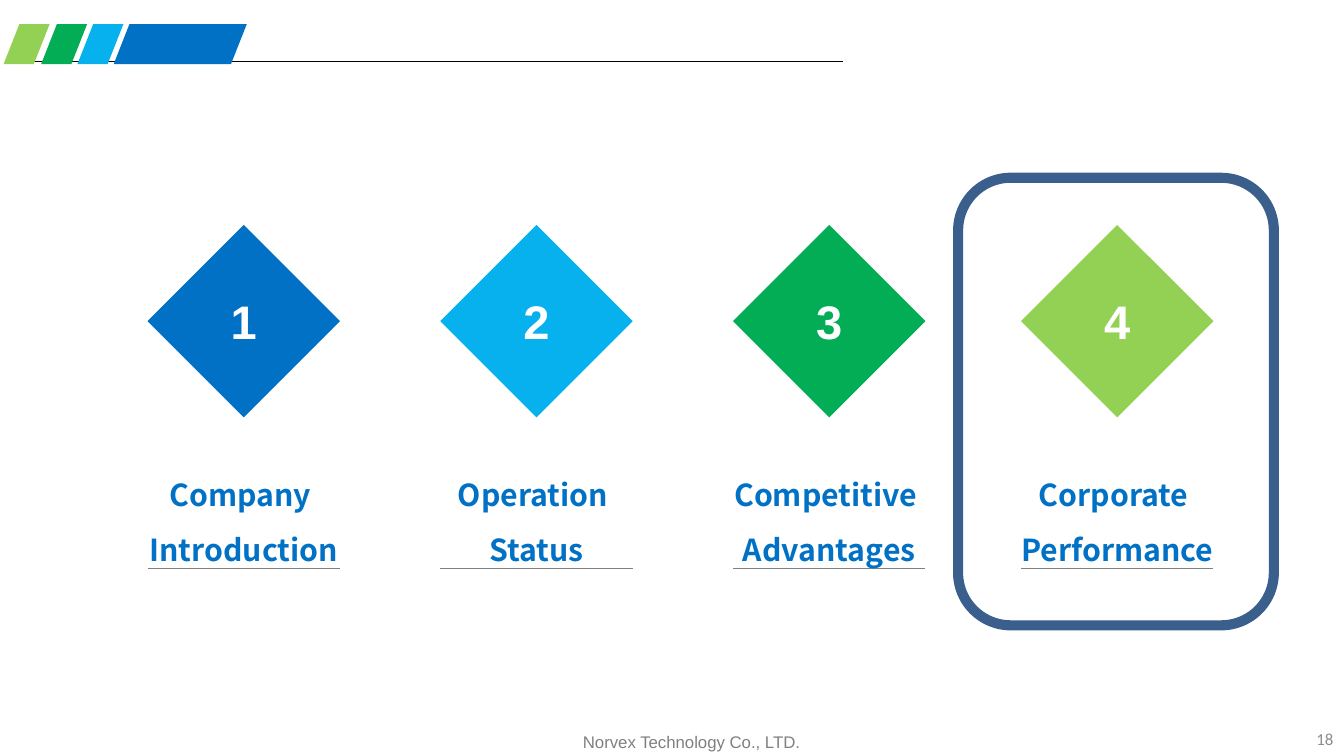
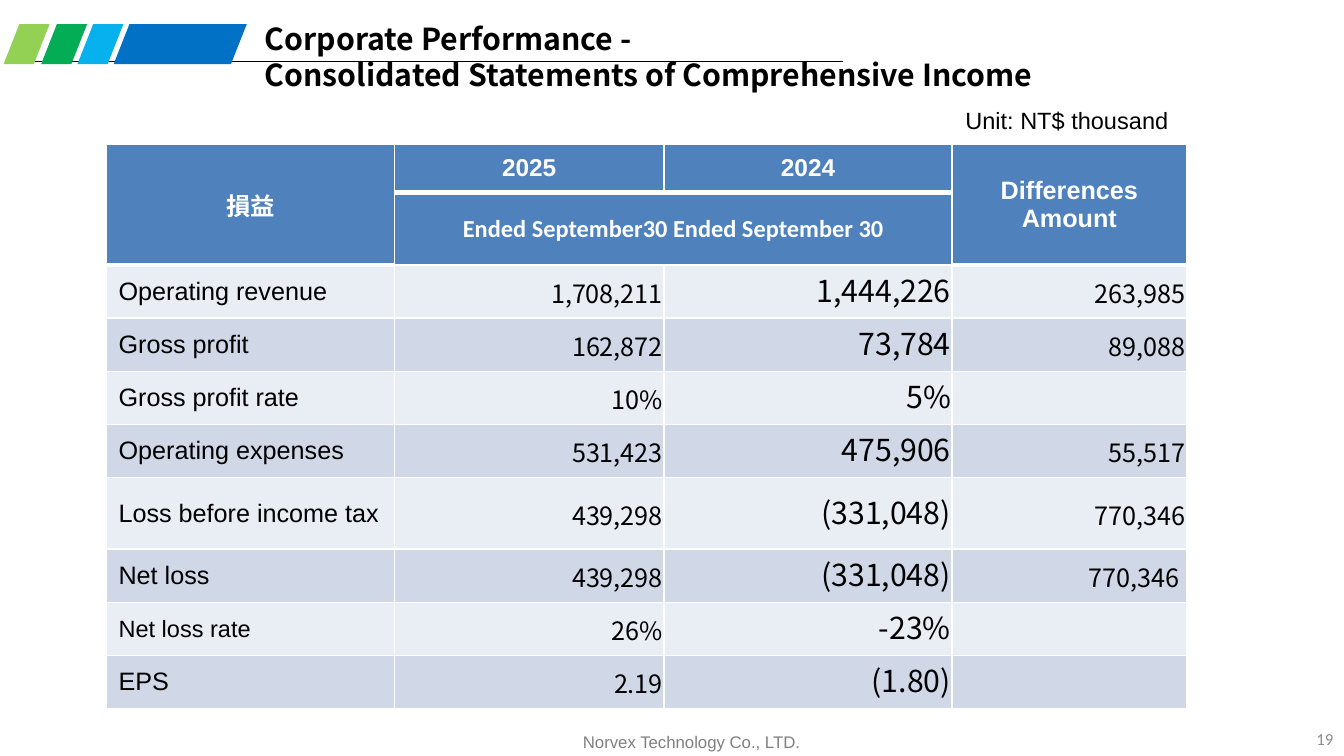
import pptx
import pptx.dml.color
import pptx.enum.shapes
import pptx.enum.text
import pptx.oxml
import pptx.oxml.ns
import pptx.util

Inches = pptx.util.Inches
Pt = pptx.util.Pt
ALIGN = pptx.enum.text.PP_ALIGN
ANCHOR = pptx.enum.text.MSO_ANCHOR
SHAPE = pptx.enum.shapes.MSO_SHAPE

COLORS = {
    "blue": "0071C5", "sky": "06B1EE", "green": "03AD55", "lime": "93D154",
    "frame": "3A5F8C", "rule": "808080", "number": "8C8C8C",
    "black": "000000", "white": "FFFFFF",
    "header": "4F81BD", "light": "E9EDF4", "dark": "D0D8E8",
}
SANS, CJK, CALIBRI = "Arial", "Noto Sans CJK SC", "Calibri"


def rgb(name):
    return pptx.dml.color.RGBColor.from_string(COLORS[name])


class Deck:
    """Holds the shared style and the slide being built."""

    def __init__(self):
        self.presentation = pptx.Presentation()
        self.presentation.slide_width = Inches(11.11)
        self.presentation.slide_height = Inches(6.25)
        self.slide = None

    def new_slide(self, number):
        layout = self.presentation.slide_layouts[6]
        self.slide = self.presentation.slides.add_slide(layout)
        self.text((4.09, 6, 3.25, 0.28), ["Norvex Technology Co., LTD."],
                  size=10, color="rule", align=ALIGN.CENTER)
        self.line(0.07, 6.97, 0.51, "black")
        for left, width, color in ((0.94, 0.97, "blue"), (0.64, 0.25, "sky"),
                                   (0.34, 0.25, "green"), (0.03, 0.25, "lime")):
            self.slanted_bar(left, width, color)
        self.text((10.63, 5.96, 0.49, 0.29), [str(number)], size=10, font=CALIBRI,
                  color="number", align=ALIGN.RIGHT, anchor=ANCHOR.MIDDLE)

    def add_lines(self, frame, lines, size, font=SANS, color="black", bold=False,
                  align=ALIGN.LEFT, spacing=None):
        for index, line in enumerate(lines):
            paragraph = frame.paragraphs[0] if index == 0 else frame.add_paragraph()
            paragraph.alignment = align
            if spacing:
                paragraph.line_spacing = spacing
            run = paragraph.add_run()
            run.text = line
            run.font.size = Pt(size)
            run.font.name = font
            run.font.bold = bold
            run.font.color.rgb = rgb(color)

    def text(self, box, lines, wrap=True, anchor=ANCHOR.TOP, inset=None, **style):
        frame = self.slide.shapes.add_textbox(*map(Inches, box)).text_frame
        frame.word_wrap = wrap
        frame.vertical_anchor = anchor
        if inset is not None:
            frame.margin_left = frame.margin_right = Inches(inset)
            frame.margin_top = frame.margin_bottom = Inches(inset)
        self.add_lines(frame, lines, **style)

    def title(self, lines):
        self.text((2.09, 0.12, 7.25, 0.7), lines, size=18, font=CJK, bold=True)

    def line(self, left, right, top, color):
        connector = self.slide.shapes.add_connector(
            pptx.enum.shapes.MSO_CONNECTOR.STRAIGHT,
            Inches(left), Inches(top), Inches(right), Inches(top))
        connector.line.color.rgb = rgb(color)
        connector.line.width = Pt(0.75)
        properties = connector._element.spPr
        properties.append(pptx.oxml.parse_xml(
            f"<a:effectLst {pptx.oxml.ns.nsdecls('a')}/>"))

    def paint(self, shape, fill=None, outline=None, width=0):
        shape.shadow.inherit = False
        if fill:
            shape.fill.solid()
            shape.fill.fore_color.rgb = rgb(fill)
        else:
            shape.fill.background()
        if outline:
            shape.line.color.rgb = rgb(outline)
            shape.line.width = Pt(width)
        else:
            shape.line.fill.background()

    def slanted_bar(self, left, width, color, top=0.2, height=0.33, slant=0.13):
        bottom = top + height
        corners = [(left + slant, top), (left + slant + width, top),
                   (left + width, bottom), (left, bottom)]
        points = [(Inches(x), Inches(y)) for x, y in corners]
        builder = self.slide.shapes.build_freeform(*points[0])
        builder.add_line_segments(points[1:], close=True)
        self.paint(builder.convert_to_shape(), color)

    def shape(self, kind, box, **look):
        shape = self.slide.shapes.add_shape(kind, *map(Inches, box))
        self.paint(shape, **look)
        return shape

    def diamond(self, left, label, color):
        diamond = self.shape(SHAPE.DIAMOND, (left, 1.86, 1.59, 1.59), fill=color)
        diamond.text_frame.vertical_anchor = ANCHOR.MIDDLE
        self.add_lines(diamond.text_frame, [label], size=28, color="white",
                       bold=True, align=ALIGN.CENTER)

    def table(self, left, top, columns, rows):
        table = self.slide.shapes.add_table(
            len(rows), len(columns), Inches(left), Inches(top),
            Inches(sum(columns)), Inches(sum(rows))).table
        table.first_row = table.horz_banding = False
        for column, width in zip(table.columns, columns):
            column.width = Inches(width)
        for row, height in zip(table.rows, rows):
            row.height = Inches(height)
        return table

    def cell(self, cell, lines, fill, bottom=1, margins=None, **style):
        properties = cell._tc.get_or_add_tcPr()
        for side, width in (("L", 1), ("R", 1), ("T", 1), ("B", bottom)):
            properties.append(pptx.oxml.parse_xml(
                f"<a:ln{side} {pptx.oxml.ns.nsdecls('a')} w='{Pt(width)}'><a:solidFill>"
                f"<a:srgbClr val='{COLORS['white']}'/></a:solidFill></a:ln{side}>"))
        cell.fill.solid()
        cell.fill.fore_color.rgb = rgb(fill)
        cell.vertical_anchor = ANCHOR.MIDDLE
        if margins:
            (cell.margin_left, cell.margin_top,
             cell.margin_right, cell.margin_bottom) = map(Inches, margins)
        self.add_lines(cell.text_frame, lines, **style)


def build_agenda(deck):
    deck.new_slide(18)
    sections = (
        (1.22, "blue", ["Company ", "Introduction"]),
        (3.64, "sky", ["Operation ", "Status"]),
        (6.06, "green", ["Competitive ", "Advantages"]),
        (8.44, "lime", ["Corporate ", "Performance"]),
    )
    # Frame around the current section
    deck.shape(SHAPE.ROUNDED_RECTANGLE, (7.92, 1.47, 2.61, 3.7),
               outline="frame", width=6)
    for number, (left, color, lines) in enumerate(sections, 1):
        deck.diamond(left, str(number), color)
        deck.line(left, left + 1.59, 4.7, "rule")
        deck.text((left - 0.12, 3.74, 1.83, 0.96), lines, wrap=False, size=18,
                  font=CJK, color="blue", bold=True, align=ALIGN.CENTER, spacing=1.5)


def build_income(deck):
    deck.new_slide(19)
    deck.title(["Corporate Performance -",
                "Consolidated Statements of Comprehensive Income"])
    records = (
        ("Operating revenue", "1,708,211", "1,444,226", "263,985"),
        ("Gross profit", "162,872", "73,784", "89,088"),
        ("Gross profit rate", "10%", "5%", ""),
        ("Operating expenses", "531,423", "475,906", "55,517"),
        ("Loss before income tax", "439,298", "(331,048)", "770,346"),
        ("Net loss", "439,298", "(331,048)", "770,346 "),
        ("Net loss rate", "26%", "-23%", ""),
        ("EPS", "2.19", "(1.80)", ""),
    )
    heights = [0.4, 0.59] + [0.59 if record[0].startswith("Loss") else 0.44
                             for record in records]
    table = deck.table(0.88, 1.19, [2.38, 2.23, 2.38, 1.94], heights)

    # Header
    table.cell(0, 0).merge(table.cell(1, 0))
    table.cell(0, 3).merge(table.cell(1, 3))
    table.cell(1, 1).merge(table.cell(1, 2))
    period = "Ended September30 Ended September 30"
    headers = (
        (0, 0, ["損益"], 14.5, SANS, 3), (1, 0, [], 14.5, SANS, 3),
        (0, 1, ["2025"], 14.5, SANS, 3), (0, 2, ["2024"], 14.5, SANS, 3),
        (0, 3, ["Differences", "Amount"], 15, SANS, 3), (1, 3, [], 15, SANS, 3),
        (1, 1, [period], 14.5, CALIBRI, 1), (1, 2, [], 14.5, CALIBRI, 1),
    )
    for row, column, lines, size, font, bottom in headers:
        deck.cell(table.cell(row, column), lines, "header", bottom, size=size,
                  font=font, color="white", bold=True, align=ALIGN.CENTER)

    # Figures
    for row, (name, *figures) in enumerate(records, 2):
        fill = "dark" if row % 2 else "light"
        deck.cell(table.cell(row, 0), [name], fill,
                  size=14 if name == "Net loss rate" else 15)
        for column, figure in enumerate(figures, 1):
            size, bottom_margin = (18, 0.05) if column == 2 else (15, 0)
            deck.cell(table.cell(row, column), [figure] if figure else [], fill,
                      margins=(0.01, 0.01, 0.01, bottom_margin),
                      size=size, font=CJK, align=ALIGN.RIGHT)

    deck.text((7.92, 0.82, 2.14, 0.41), ["Unit: NT$ thousand"], inset=0.06, size=14)


def main():
    deck = Deck()
    build_agenda(deck)
    build_income(deck)
    deck.presentation.save("out.pptx")


if __name__ == "__main__":
    main()
